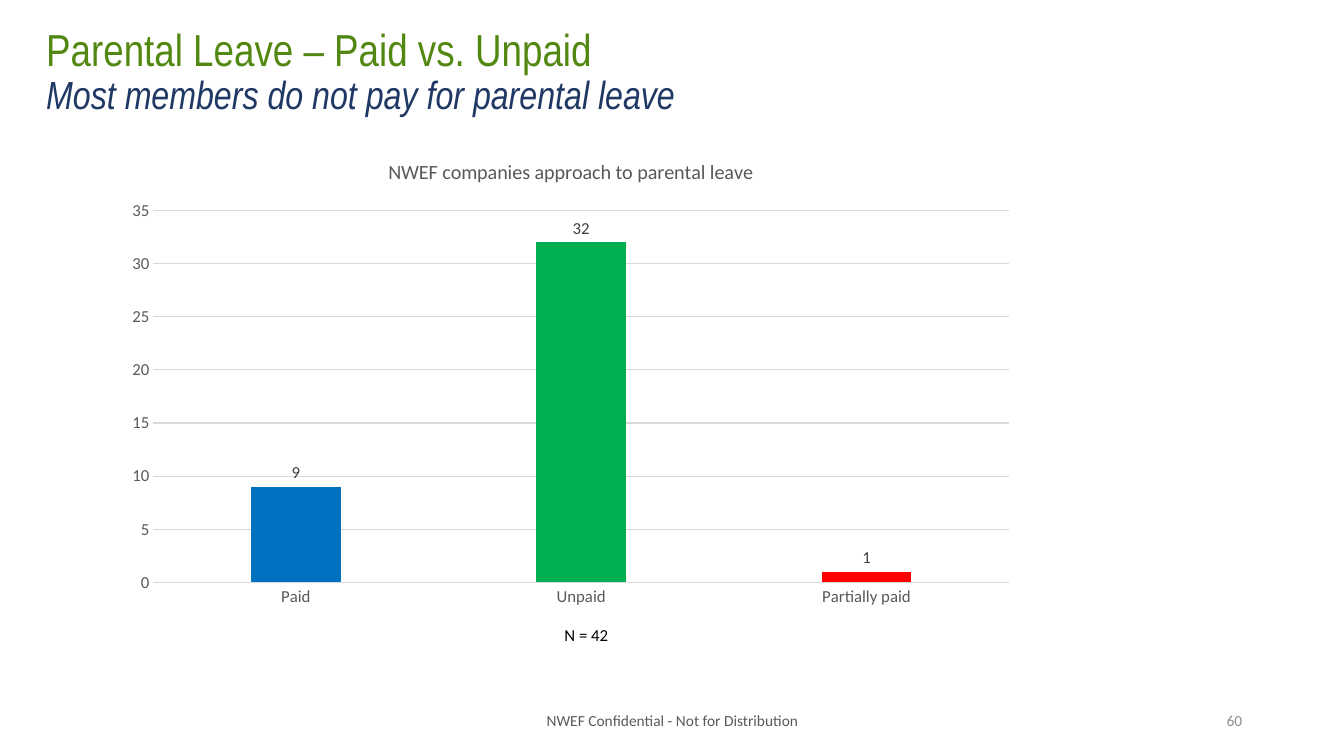
from pptx import Presentation
from pptx.chart.data import CategoryChartData
from pptx.dml.color import RGBColor
from pptx.enum.chart import XL_CHART_TYPE, XL_LABEL_POSITION, XL_TICK_MARK
from pptx.enum.text import MSO_ANCHOR, PP_ALIGN
from pptx.util import Inches, Pt

INK = {
    "green": "528811", "navy": "203864", "gray": "595959", "pale": "8C8C8C",
    "black": "000000", "dark": "404040", "rule": "D9D9D9", "base": "5B9BD5",
    "paid": "0070C0", "unpaid": "00B050", "part": "FF0000",
}


class Deck:
    """Holds the style and the slide; places are percent of slide size."""
    head, body = "Arial Narrow", "Calibri"

    def __init__(self):
        self.show = Presentation()
        self.show.slide_width = Inches(13.33)
        self.show.slide_height = Inches(7.5)
        self.slide = self.show.slides.add_slide(self.show.slide_layouts[6])

    def place(self, left, top, width, height):
        wide, high = self.show.slide_width, self.show.slide_height
        return [int(part * full / 100) for part, full in
                zip((left, top, width, height), (wide, high, wide, high))]

    def color(self, name):
        return RGBColor.from_string(INK[name])

    def style(self, font, size, ink, face=None, slant=False):
        font.size, font.name = Pt(size), face or self.body
        font.bold, font.italic = False, slant
        font.color.rgb = self.color(ink)

    def text(self, spot, lines, align=PP_ALIGN.LEFT, anchor=MSO_ANCHOR.MIDDLE, space=1.0):
        """Each line is (words, size, ink, face, slant)."""
        frame = self.slide.shapes.add_textbox(*self.place(*spot)).text_frame
        frame.word_wrap, frame.vertical_anchor = True, anchor
        para = frame.paragraphs[0]
        para.alignment, para.line_spacing = align, space
        for rank, (words, *look) in enumerate(lines):
            if rank:
                para.add_line_break()
            run = para.add_run()
            run.text = words
            self.style(run.font, *look)

    def bars(self, spot, title, points):
        """Each point is (label, value, ink)."""
        data = CategoryChartData()
        data.categories = [label for label, _, _ in points]
        data.add_series("Series 1", [value for _, value, _ in points])
        chart = self.slide.shapes.add_chart(
            XL_CHART_TYPE.COLUMN_CLUSTERED, *self.place(*spot), data).chart
        self.style(chart.font, 12, "black")
        chart.has_legend = False

        # Chart title
        chart.has_title = True
        chart.chart_title.include_in_layout = False
        run = chart.chart_title.text_frame.paragraphs[0].add_run()
        run.text = title
        self.style(run.font, 14.4, "gray")

        # Axes and grid
        for axis in (chart.category_axis, chart.value_axis):
            axis.major_tick_mark = axis.minor_tick_mark = XL_TICK_MARK.NONE
            self.style(axis.tick_labels.font, 12, "gray")
        grid = chart.value_axis.major_gridlines
        for line in (chart.category_axis.format.line, grid.format.line):
            line.color.rgb, line.width = self.color("rule"), Pt(0.75)
        chart.value_axis.format.line.fill.background()
        chart.value_axis.minimum_scale = 0
        chart.value_axis.maximum_scale = 35
        chart.value_axis.major_unit = 5

        # Columns and their labels
        plot = chart.plots[0]
        plot.gap_width, plot.overlap, plot.vary_by_categories = 219, -27, False
        series = plot.series[0]
        fills = [series.format.fill]
        fills += [series.points[rank].format.fill for rank in range(len(points))]
        for fill, ink in zip(fills, ["base"] + [ink for _, _, ink in points]):
            fill.solid()
            fill.fore_color.rgb = self.color(ink)
        labels = series.data_labels
        labels.show_value = True
        labels.position = XL_LABEL_POSITION.OUTSIDE_END
        self.style(labels.font, 12, "dark")


def main():
    deck = Deck()

    # Heading
    deck.text((2.7, 0, 86.27, 19.33), [
        ("Parental Leave – Paid vs. Unpaid", 32, "green", deck.head),
        ("Most members do not pay for parental leave", 28, "navy", deck.head, True),
    ], space=0.9)

    # Chart and sample size
    deck.bars((8.48, 18.53, 67.97, 62.93), "NWEF companies approach to parental leave", [
        ("Paid", 9, "paid"),
        ("Unpaid", 32, "unpaid"),
        ("Partially paid", 1, "part"),
    ])
    deck.text((41.26, 82, 5.85, 4), [("N = 42", 12, "black")], anchor=MSO_ANCHOR.TOP)

    # Footer
    deck.text((33.16, 92.67, 33.76, 5.33),
              [("NWEF Confidential - Not for Distribution", 11, "gray")], PP_ALIGN.CENTER)
    deck.text((70.67, 92.67, 22.5, 5.33), [("60", 11, "pale")], PP_ALIGN.RIGHT)

    deck.show.save("out.pptx")


if __name__ == "__main__":
    main()
